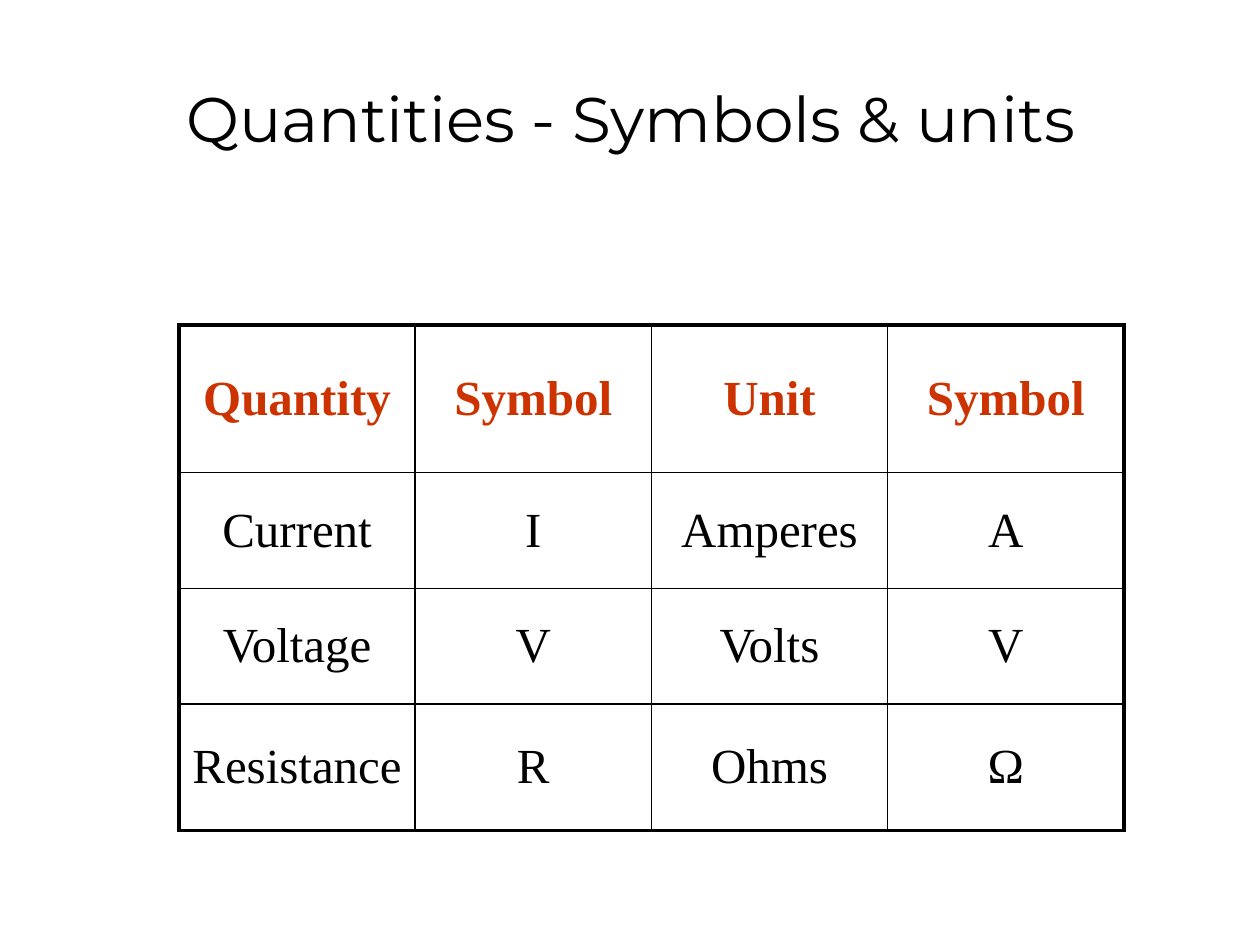
from lxml import etree
from pptx import Presentation
from pptx.dml.color import RGBColor
from pptx.enum import text
from pptx.oxml import ns
from pptx.util import Inches, Pt

# Content
TITLE = "Quantities - Symbols & units"
ROWS = [
    ("Quantity", "Symbol", "Unit", "Symbol"),
    ("Current", "I", "Amperes", "A"),
    ("Voltage", "V", "Volts", "V"),
    ("Resistance", "R", "Ohms", "Ω"),
]
ROW_HEIGHTS = (1.17, 0.92, 0.92, 1)
TABLE_LEFT, TABLE_TOP, TABLE_WIDTH = 1.42, 2.58, 7.5
BLACK, RED = "000000", "CC3300"
OUTER, INNER = 2.25, 1


def write(frame, words, font, size, color=BLACK, bold=False, before=0):
    para = frame.paragraphs[0]
    para.alignment = text.PP_ALIGN.CENTER
    para.space_before = Pt(before)
    span = para.add_run()
    span.text = words
    span.font.name = font
    span.font.size = Pt(size)
    span.font.bold = bold
    span.font.color.rgb = RGBColor.from_string(color)


def add_border(cell, side, width, color=BLACK):
    line = etree.SubElement(cell._tc.get_or_add_tcPr(), ns.qn(f"a:ln{side}"),
                            w=str(Pt(width)))
    fill = etree.SubElement(line, ns.qn("a:solidFill"))
    etree.SubElement(fill, ns.qn("a:srgbClr"), val=color)


deck = Presentation()
deck.slide_width, deck.slide_height = Inches(10), Inches(7.5)
page = deck.slides.add_slide(deck.slide_layouts[5])

# Title
title = page.shapes.title
title.left, title.top = Inches(0.42), Inches(0.58)
title.width, title.height = Inches(9.17), Inches(1.5)
title.text_frame.word_wrap = False
title.text_frame.auto_size = text.MSO_AUTO_SIZE.NONE
title.text_frame.vertical_anchor = text.MSO_ANCHOR.TOP
write(title.text_frame, TITLE, "Montserrat", 36)

# Table grid
last_row, last_column = len(ROWS) - 1, len(ROWS[0]) - 1
table = page.shapes.add_table(
    len(ROWS), len(ROWS[0]), Inches(TABLE_LEFT), Inches(TABLE_TOP),
    Inches(TABLE_WIDTH), Inches(sum(ROW_HEIGHTS))).table
table.horz_banding = False
for column in table.columns:
    column.width = Inches(TABLE_WIDTH / len(ROWS[0]))
for row, height in zip(table.rows, ROW_HEIGHTS):
    row.height = Inches(height)

# Cells: heavy lines on the outside, thin lines inside
for r, words_in_row in enumerate(ROWS):
    for c, words in enumerate(words_in_row):
        cell = table.cell(r, c)
        cell.vertical_anchor = text.MSO_ANCHOR.MIDDLE
        edges = {"L": c == 0, "R": c == last_column,
                 "T": r == 0, "B": r == last_row}
        for side, is_outer in edges.items():
            add_border(cell, side, OUTER if is_outer else INNER)
        cell.fill.background()
        write(cell.text_frame, words, "Times New Roman", 28,
              color=RED if r == 0 else BLACK, bold=r == 0, before=5.6)

deck.save("out.pptx")
